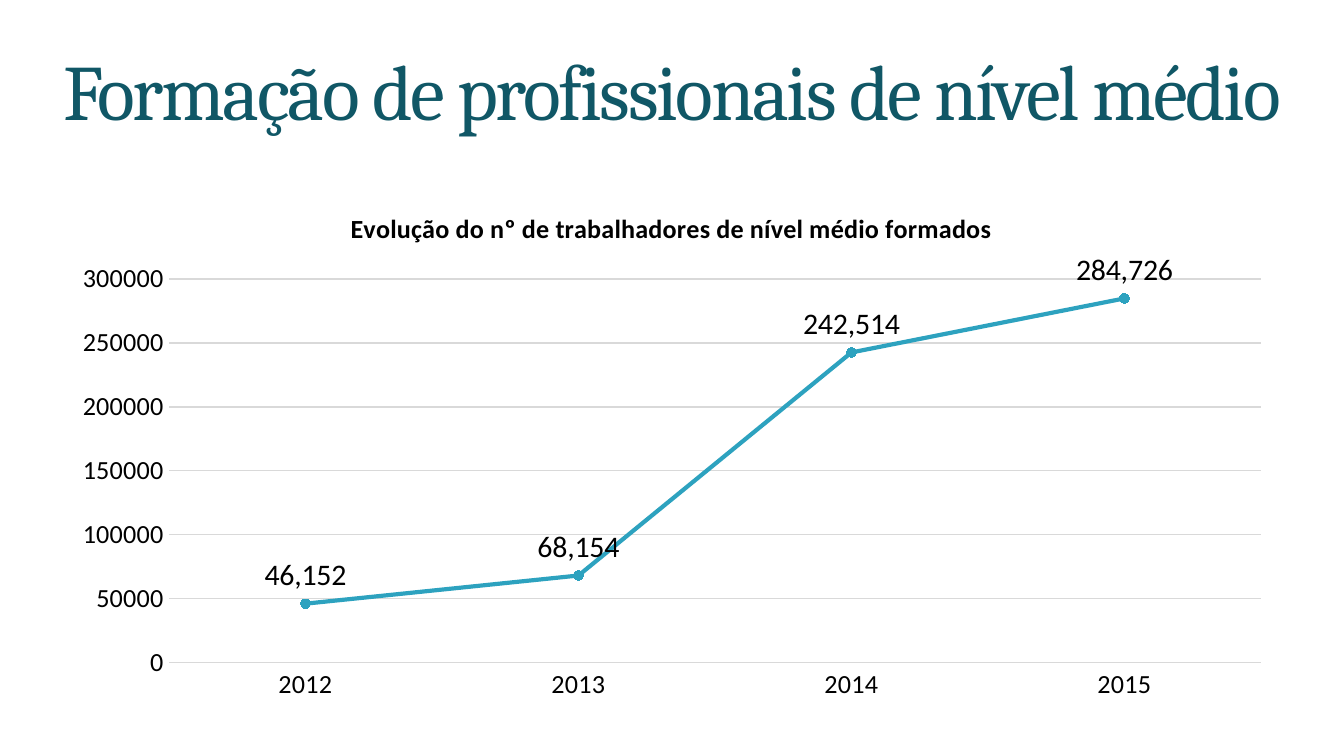
from lxml import etree
from pptx import Presentation
from pptx.chart.data import CategoryChartData
from pptx.dml.color import RGBColor
from pptx.enum.chart import XL_CHART_TYPE, XL_LABEL_POSITION, XL_MARKER_STYLE, XL_TICK_MARK
from pptx.enum.text import MSO_ANCHOR, PP_ALIGN
from pptx.oxml.ns import qn
from pptx.util import Pt

PX = 914400 / 134.4
LINE_MARKERS = XL_CHART_TYPE.LINE_MARKERS
ABOVE = XL_LABEL_POSITION.ABOVE
CIRCLE = XL_MARKER_STYLE.CIRCLE
NO_TICK = XL_TICK_MARK.NONE
CENTER = PP_ALIGN.CENTER
MIDDLE = MSO_ANCHOR.MIDDLE

BLACK = RGBColor(0x00, 0x00, 0x00)
TEAL = RGBColor(0x10, 0x57, 0x66)
BLUE = RGBColor(0x2D, 0xA2, 0xBF)
GRAY = RGBColor(0xD9, 0xD9, 0xD9)


def px(n):
    return round(n * PX)


def write_text(frame, text, *, size, font, color, bold=False, spacing=None, line_spacing=None):
    paragraph = frame.paragraphs[0]
    paragraph.alignment = CENTER
    if line_spacing:
        paragraph.line_spacing = line_spacing
    run = paragraph.add_run()
    run.text = text
    run.font.size = Pt(size)
    run.font.name = font
    run.font.bold = bold
    run.font.color.rgb = color
    if spacing:
        run.font._element.set("spc", str(round(spacing * 100)))


prs = Presentation()
prs.slide_width, prs.slide_height = px(1344), px(756)
slide = prs.slides.add_slide(prs.slide_layouts[6])

# Trained workers per year
trained = CategoryChartData(number_format="#,##0")
trained.categories = ["2012", "2013", "2014", "2015"]
trained.add_series("Series 1", [46152, 68154, 242514, 284726])
chart_left, chart_top, chart_width, chart_height = 58, 188, 1227, 524
chart = slide.shapes.add_chart(
    LINE_MARKERS, px(chart_left), px(chart_top), px(chart_width), px(chart_height), trained
).chart
chart.has_legend = False
chart.font.name = "Calibri"
chart.font.size = Pt(16)
chart.font.color.rgb = BLACK
chart.has_title = True
write_text(chart.chart_title.text_frame, "Evolução do nº de trabalhadores de nível médio formados",
           size=14, font="Calibri", color=BLACK, bold=True)
chart.chart_title.include_in_layout = False

years, workers = chart.category_axis, chart.value_axis
for axis in (years, workers):
    axis.major_tick_mark = axis.minor_tick_mark = NO_TICK
    axis.tick_labels.font.size = Pt(14)
years.format.line.color.rgb = GRAY
years.format.line.width = Pt(0.75)
workers.minimum_scale, workers.maximum_scale, workers.major_unit = 0, 300000, 50000
workers.tick_labels.number_format = "0"
workers.tick_labels.number_format_is_linked = False
workers.format.line.fill.background()
workers.major_gridlines.format.line.color.rgb = GRAY
workers.major_gridlines.format.line.width = Pt(0.75)

plot = chart.plots[0]
plot.vary_by_categories = False
evolution = plot.series[0]
evolution.smooth = False
evolution.format.line.color.rgb = BLUE
evolution.format.line.width = Pt(2.25)
evolution.marker.style = CIRCLE
evolution.marker.size = 5
evolution.marker.format.fill.solid()
evolution.marker.format.fill.fore_color.rgb = BLUE
evolution.marker.format.line.color.rgb = BLUE
labels = evolution.data_labels
labels.show_value = True
labels.position = ABOVE
labels.number_format = "#,##0"
labels.number_format_is_linked = False
labels.font.size = Pt(16)

# Fixed inner plot area, as fractions of the chart
plot_area = chart._chartSpace.chart.plotArea
for old_layout in plot_area.findall(qn("c:layout")):
    plot_area.remove(old_layout)
layout = etree.Element(qn("c:layout"))
plot_area.insert(0, layout)
manual = etree.SubElement(layout, qn("c:manualLayout"))
for tag, value in (
    ("layoutTarget", "inner"), ("xMode", "edge"), ("yMode", "edge"),
    ("x", (169 - chart_left) / chart_width), ("y", (279 - chart_top) / chart_height),
    ("w", 1092 / chart_width), ("h", 384 / chart_height),
):
    etree.SubElement(manual, qn(f"c:{tag}")).set("val", str(value))

# Heading
heading = slide.shapes.add_textbox(0, px(35), px(1344), px(126)).text_frame
heading.word_wrap = True
heading.vertical_anchor = MIDDLE
heading.margin_left = heading.margin_right = heading.margin_top = heading.margin_bottom = px(5)
write_text(heading, "Formação de profissionais de nível médio",
           size=42, font="Cambria", color=TEAL, spacing=-1.3, line_spacing=0.8)

prs.save("out.pptx")
